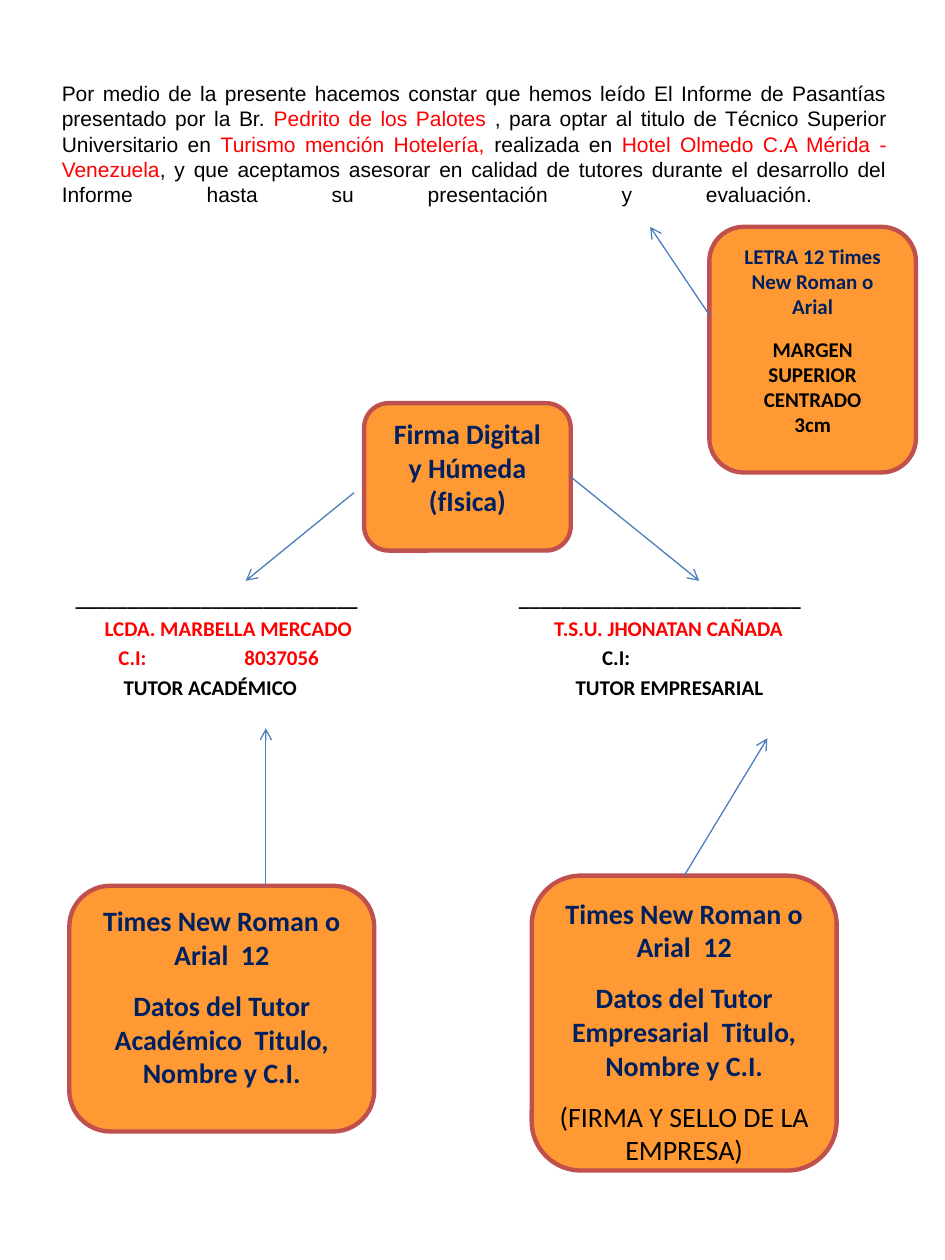
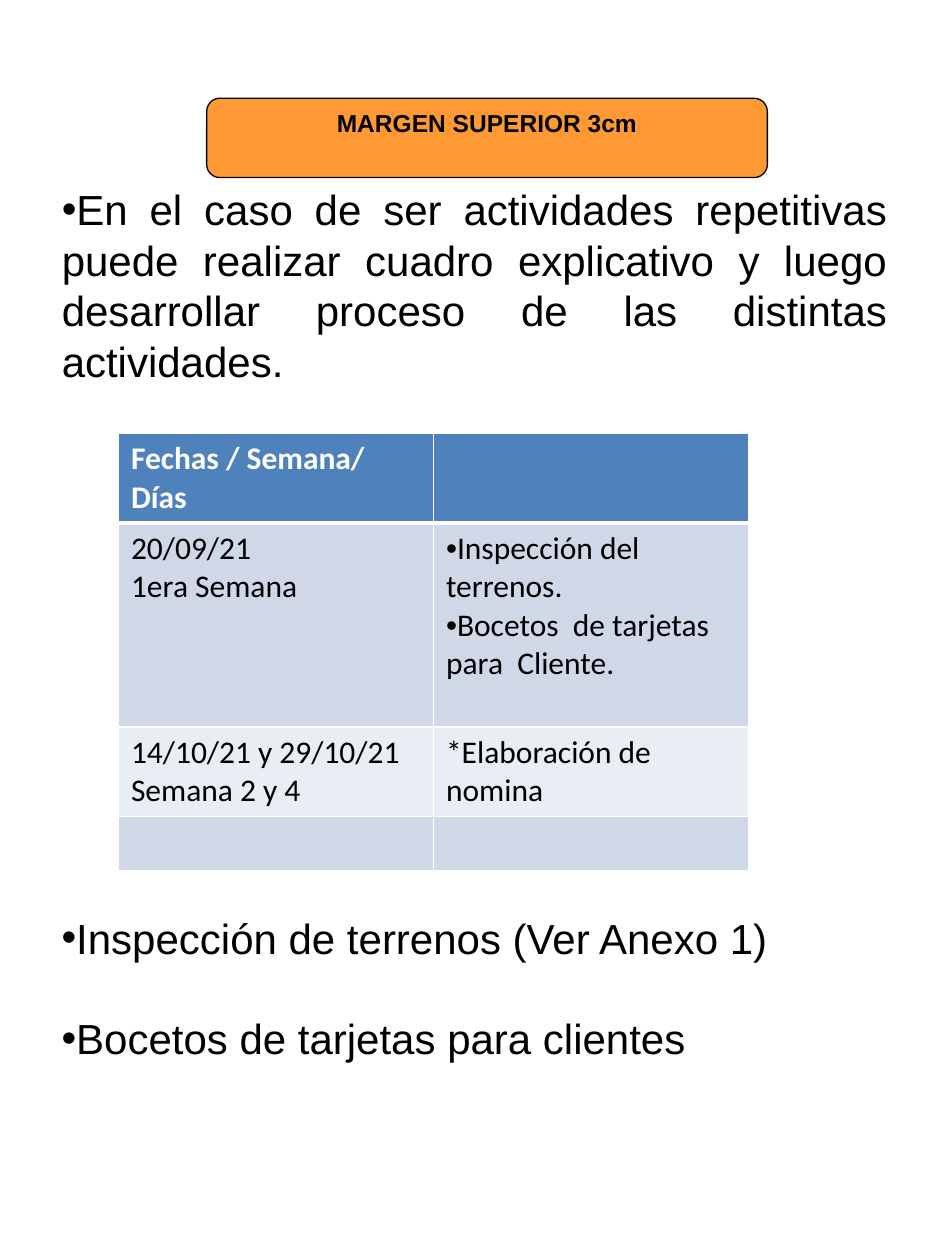
from lxml.etree import SubElement
from pptx import Presentation
from pptx.dml.color import RGBColor
from pptx.enum.shapes import MSO_CONNECTOR as Connector, MSO_SHAPE as Shape
from pptx.enum.text import MSO_ANCHOR as Anchor, MSO_AUTO_SIZE as AutoSize, PP_ALIGN as Align
from pptx.oxml.ns import qn
from pptx.util import Inches, Pt

BLACK, WHITE, RED, NAVY = "000000", "FFFFFF", "FF0000", "002060"
ORANGE, BRICK, ARROW_BLUE = "FF9933", "C0504D", "4B7EBC"
HEADER_BLUE, BAND_DARK, BAND_LIGHT = "4F81BD", "D0D8E8", "E9EDF4"
TEXT_LEFT, TEXT_WIDTH = 0.39, 6.75


def color(hex_code):
    """Turn a hex string into a colour."""
    return RGBColor.from_string(hex_code)


def inches(*lengths):
    """Turn plain numbers into lengths."""
    return [Inches(length) for length in lengths]


def write(frame, text, first=False, size=12, font="Calibri", ink=BLACK, bold=False,
          align=Align.LEFT, before=0, after=0, bullet=None, indent=0):
    """Write one paragraph; text is a string or a list of (words, colour) runs."""
    paragraph = frame.paragraphs[0] if first else frame.add_paragraph()
    paragraph.alignment = align
    paragraph.space_before, paragraph.space_after = Pt(before), Pt(after)
    properties = paragraph._p.get_or_add_pPr()
    properties.set("marL", str(Inches(indent)))
    properties.set("indent", "0")
    if bullet:
        SubElement(properties, qn("a:buFont"), typeface="Arial")
        SubElement(properties, qn("a:buChar"), char=bullet)
    else:
        SubElement(properties, qn("a:buNone"))
    for words, run_ink in [(text, ink)] if isinstance(text, str) else text:
        run = paragraph.add_run()
        run.text = words
        run.font.size, run.font.name, run.font.bold = Pt(size), font, bold
        run.font.color.rgb = color(run_ink)
    return paragraph


def end_with_break(paragraph, size):
    """Close a paragraph with a line break of the given text size."""
    points = str(size * 100)
    line_break = SubElement(paragraph._p, qn("a:br"))
    SubElement(line_break, qn("a:rPr"), sz=points)
    SubElement(paragraph._p, qn("a:endParaRPr"), sz=points)


def place(placeholder, top, height, width=TEXT_WIDTH):
    """Move a placeholder to the text margin and return its frame."""
    placeholder.left, placeholder.top, placeholder.width, placeholder.height = inches(
        TEXT_LEFT, top, width, height)
    frame = placeholder.text_frame
    frame.word_wrap, frame.auto_size = True, AutoSize.NONE
    return frame


def add_text_frame(slide, *box):
    """Add a wrapping text box and return its frame."""
    frame = slide.shapes.add_textbox(*inches(*box)).text_frame
    frame.word_wrap = True
    return frame


def add_callout(slide, box, lines, border=BRICK, weight=2.5, inset=0.1, **text_format):
    """Add an orange rounded note; each line is (text, own format)."""
    callout = slide.shapes.add_shape(Shape.ROUNDED_RECTANGLE, *inches(*box))
    callout.shadow.inherit = False
    callout.fill.solid()
    callout.fill.fore_color.rgb = color(ORANGE)
    callout.line.color.rgb, callout.line.width = color(border), Pt(weight)
    frame = callout.text_frame
    frame.word_wrap, frame.vertical_anchor = True, Anchor.TOP
    frame.margin_left = frame.margin_right = Inches(inset)
    base = dict(ink=NAVY, bold=True, align=Align.CENTER, after=10) | text_format
    for index, (text, own_format) in enumerate(lines):
        write(frame, text, first=index == 0, **(base | own_format))
    return callout


def add_arrow(slide, start, end, source=None, side=0):
    """Add a thin arrow, joined to a callout's side if one is given."""
    arrow = slide.shapes.add_connector(Connector.STRAIGHT, *inches(*start, *end))
    if source is not None:
        arrow.begin_connect(source, side)
    arrow.line.color.rgb, arrow.line.width = color(ARROW_BLUE), Pt(0.75)
    properties = arrow._element.spPr
    SubElement(properties.find(qn("a:ln")), qn("a:tailEnd"), type="arrow")
    SubElement(properties, qn("a:effectLst"))


def style_cell(cell, fill, bottom=1):
    """Give a cell white borders and a fill."""
    properties = cell._tc.get_or_add_tcPr()
    for edge, weight in (("L", 1), ("R", 1), ("T", 1), ("B", bottom)):
        border = SubElement(properties, qn(f"a:ln{edge}"), w=str(Pt(weight)))
        paint = SubElement(border, qn("a:solidFill"))
        SubElement(paint, qn("a:srgbClr"), val=WHITE)
    cell.fill.solid()
    cell.fill.fore_color.rgb = color(fill)


def add_schedule(slide):
    """Add the table of dates and activities."""
    rows = [
        (0.7, HEADER_BLUE, ["Fechas / Semana/ Días"], []),
        (1.62, BAND_DARK, ["20/09/21", "1era Semana"],
         ["Inspección del terrenos.", "Bocetos  de tarjetas para  Cliente."]),
        (0.71, BAND_LIGHT, ["14/10/21 y 29/10/21", "Semana 2 y 4"],
         ["*Elaboración de nomina"]),
        (0.43, BAND_DARK, [], []),
    ]
    schedule = slide.shapes.add_table(len(rows), 2, *inches(0.94, 3.44, 5, 3.46)).table
    for row, (height, fill, *entries) in enumerate(rows):
        header = row == 0
        schedule.rows[row].height = Inches(height)
        for column, lines in enumerate(entries):
            cell = schedule.cell(row, column)
            style_cell(cell, fill, bottom=3 if header else 1)
            for index, line in enumerate(lines):
                write(cell.text_frame, line, first=index == 0, size=18, bold=header,
                      ink=WHITE if header else BLACK,
                      bullet="•" if len(lines) > 1 and column == 1 else None)


def write_signature(frame, lines):
    """Write a tutor's signature block; each line is (text, colour, indent)."""
    frame.margin_top = Inches(0.28)
    for index, (text, ink, indent) in enumerate(lines):
        write(frame, text, first=index == 0, bold=True, ink=ink, indent=indent,
              before=2.4 if index else 0)


def add_signatures(slide):
    """Set the two tutors' signature blocks side by side."""
    top, height, width = 4.37, 1.73, 3.22
    rule = "_" * 27
    write_signature(place(slide.placeholders[1], top, height, width), [
        (rule, BLACK, 0.11),
        ("LCDA. MARBELLA MERCADO", RED, 0.34),
        ("C.I:\t\t8037056", RED, 0.45),
        ("TUTOR ACADÉMICO", BLACK, 0.49),
    ])
    company_left = TEXT_LEFT + TEXT_WIDTH - width
    write_signature(add_text_frame(slide, company_left, top, width, height), [
        (rule, BLACK, 0.1),
        ("T.S.U. JHONATAN CAÑADA", RED, 0.38),
        ("C.I:", BLACK, 0.76),
        ("TUTOR EMPRESARIAL", BLACK, 0.55),
    ])


def build_approval(slide):
    """Build the tutors' approval letter with its notes."""
    title = place(slide.shapes.title, 0.62, 1.24)
    title.vertical_anchor = Anchor.MIDDLE
    statement = write(title, [
        ("Por medio de la presente hacemos constar que hemos leído El Informe de "
         "Pasantías presentado por la Br. ", BLACK),
        ("Pedrito de los Palotes ", RED),
        (", para optar al titulo de Técnico Superior Universitario en ", BLACK),
        ("Turismo mención Hotelería,", RED),
        (" realizada en ", BLACK),
        ("Hotel Olmedo C.A Mérida - Venezuela", RED),
        (", y que aceptamos asesorar en calidad de tutores durante el desarrollo del "
         "Informe hasta su presentación y evaluación. ", BLACK),
    ], first=True, font="Arial", align=Align.JUSTIFY)
    end_with_break(statement, 12)
    add_signatures(slide)

    add_callout(slide, (5.63, 1.8, 1.64, 1.95), [
        ("LETRA 12 Times New Roman o Arial", {}),
        ("MARGEN SUPERIOR CENTRADO", dict(ink=BLACK, after=0)),
        ("3cm", dict(ink=BLACK, after=0)),
    ])
    font_note = ("Times New Roman o Arial  12", {})
    add_callout(slide, (0.55, 7.03, 2.42, 1.95), [
        font_note,
        ("Datos del Tutor Académico  Titulo, Nombre y C.I.", {}),
    ], size=16)
    company_note = add_callout(slide, (4.22, 6.95, 2.42, 2.34), [
        font_note,
        ("Datos del Tutor Empresarial  Titulo, Nombre y C.I.", {}),
        ("(FIRMA Y SELLO DE LA EMPRESA)", dict(ink=BLACK, bold=False)),
    ], size=16)
    signing_note = add_callout(slide, (2.89, 3.2, 1.64, 1.17), [
        ("Firma Digital y Húmeda (fIsica)", {}),
    ], size=16, inset=0.14)

    add_arrow(slide, (5.63, 2.5), (5.16, 1.8))
    add_arrow(slide, (2.11, 7.03), (2.11, 5.78))
    add_arrow(slide, (5.43, 6.95), (6.09, 5.86), company_note, 0)
    add_arrow(slide, (2.81, 3.91), (1.95, 4.61))
    add_arrow(slide, (4.53, 3.79), (5.55, 4.61), signing_note, 3)


def build_activities(slide):
    """Build the page on repeated activities."""
    heading = slide.shapes.title._element
    heading.getparent().remove(heading)
    listing = dict(size=24, font="Arial", bullet="•")
    write(place(slide.placeholders[1], 1.41, 1.95),
          "En el caso de ser actividades repetitivas puede realizar cuadro explicativo "
          "y luego desarrollar proceso de las distintas actividades.",
          first=True, align=Align.JUSTIFY, **listing)
    add_schedule(slide)
    add_callout(slide, (1.64, 0.78, 4.45, 0.63), [("MARGEN SUPERIOR 3cm", {})],
                border=BLACK, weight=0.75, size=14, font="Arial", ink=BLACK)
    annexes = add_text_frame(slide, TEXT_LEFT, 7.19, TEXT_WIDTH, 1.95)
    write(annexes, "Inspección de terrenos (Ver Anexo 1)", first=True, **listing)
    write(annexes, "Bocetos de tarjetas para clientes", before=28.8, **listing)


def main():
    """Build and save both slides."""
    deck = Presentation()
    deck.slide_width, deck.slide_height = inches(7.5, 10)
    for build in (build_approval, build_activities):
        build(deck.slides.add_slide(deck.slide_layouts[1]))
    deck.save("out.pptx")


if __name__ == "__main__":
    main()
